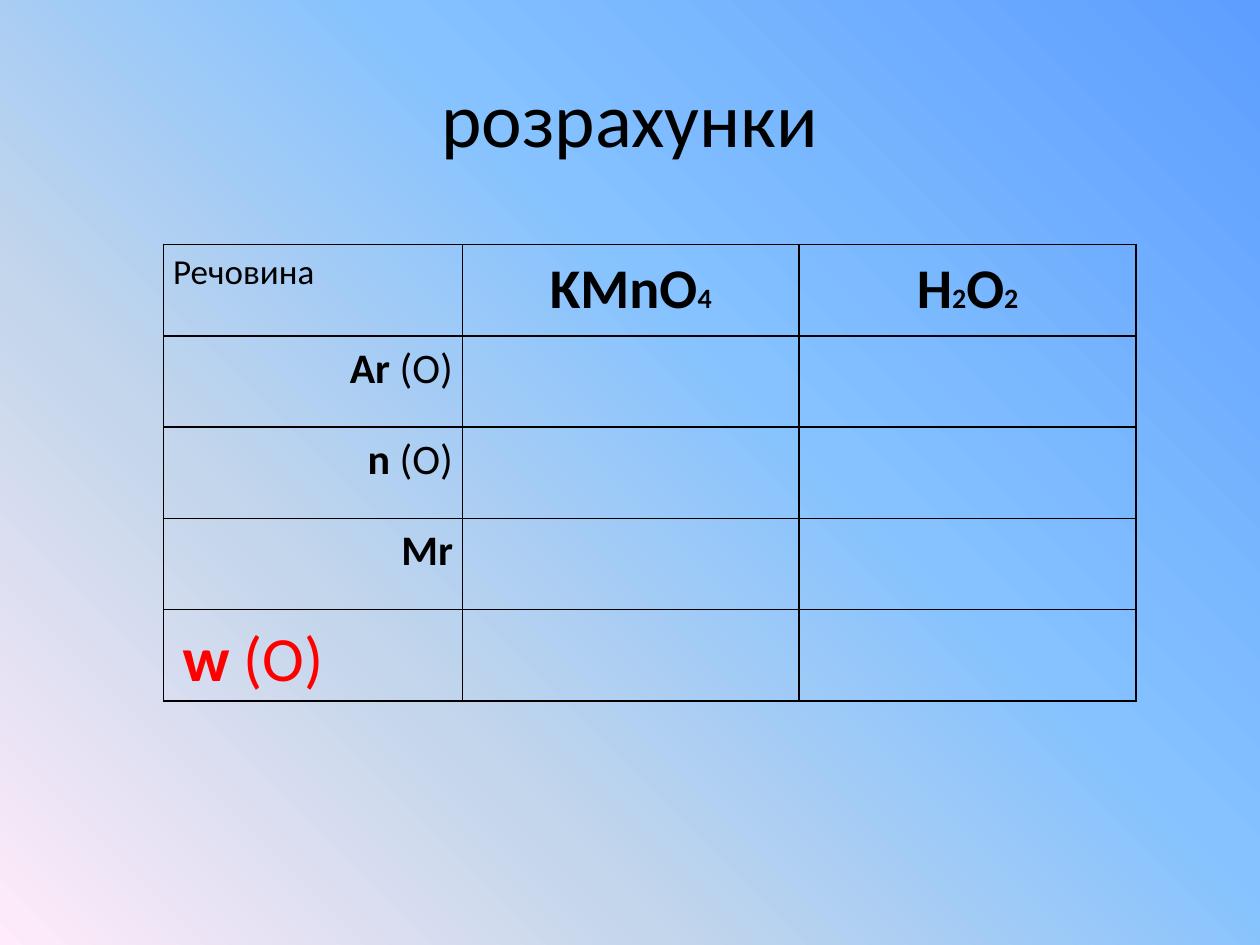
import dataclasses
import typing

import pptx
import pptx.dml.color
import pptx.enum.text
import pptx.oxml
import pptx.oxml.ns
import pptx.util

Cm = pptx.util.Cm
Align = pptx.enum.text.PP_ALIGN


@dataclasses.dataclass(frozen=True)
class Theme:
    font: str = "Calibri"
    ink: str = "000000"
    accent: str = "FF0000"
    title: int = 44
    result: int = 36
    formula: int = 32
    label: int = 24
    heading: int = 20
    index: int = 16
    border: float = 1
    line_spacing: float = 1.15
    gradient: tuple = ((0, "5E9EFF"), (40, "85C2FF"), (70, "C4D6EB"), (100, "FFEBFA"))
    # Counter-clockwise degrees
    gradient_angle: int = 225


THEME = Theme()


class Span(typing.NamedTuple):
    text: str
    size: int = THEME.label
    bold: bool = False
    color: str = THEME.ink


class Entry(typing.NamedTuple):
    spans: list[Span]
    align: Align


def formula(*parts: str) -> Entry:
    """Chemical formula in which the digits are set small."""
    spans = [Span(part, THEME.index if part.isdigit() else THEME.formula, True) for part in parts]
    return Entry(spans, Align.CENTER)


def quantity(symbol: str, element: str = "") -> Entry:
    spans = [Span(symbol, bold=True)]
    if element:
        spans.append(Span(element))
    return Entry(spans, Align.RIGHT)


HEADER = [
    Entry([Span("Речовина", THEME.heading)], Align.LEFT),
    formula("KMnO", "4"),
    formula("H", "2", "O", "2"),
]
MASS_FRACTION = Entry(
    [
        Span(" "),
        Span("w", THEME.result, True, THEME.accent),
        Span(" (O)", THEME.result, False, THEME.accent),
    ],
    Align.LEFT,
)
ROWS = [
    HEADER,
    [quantity("Ar", " (O)")],
    [quantity("n", " (O)")],
    [quantity("Mr")],
    [MASS_FRACTION],
]
COLUMN_WIDTHS = [Cm(6.02), Cm(6.79), Cm(6.79)]
ROW_HEIGHT = Cm(1.84)


def paint_background(slide) -> None:
    fill = slide.background.fill
    fill.gradient()
    fill.gradient_angle = THEME.gradient_angle
    stops = slide.background._cSld.find(".//" + pptx.oxml.ns.qn("a:gsLst"))
    for stop in list(stops):
        stops.remove(stop)
    for percent, color in THEME.gradient:
        stops.append(pptx.oxml.parse_xml(
            f'<a:gs {pptx.oxml.ns.nsdecls("a")} pos="{percent * 1000}">'
            f'<a:srgbClr val="{color}"/></a:gs>'
        ))


def write(paragraph, entry: Entry) -> None:
    paragraph.alignment = entry.align
    for span in entry.spans:
        run = paragraph.add_run()
        run.text = span.text
        run.font.name = THEME.font
        run.font.size = pptx.util.Pt(span.size)
        run.font.bold = span.bold
        run.font.color.rgb = pptx.dml.color.RGBColor.from_string(span.color)


def draw_title(slide, text: str) -> None:
    frame = slide.shapes.add_textbox(Cm(1.27), Cm(0.76), Cm(22.86), Cm(3.18)).text_frame
    frame.word_wrap = True
    frame.vertical_anchor = pptx.enum.text.MSO_ANCHOR.MIDDLE
    write(frame.paragraphs[0], Entry([Span(text, THEME.title)], Align.CENTER))


def style_cell(cell) -> None:
    cell.margin_left = cell.margin_right = Cm(0.19)
    cell.margin_top = cell.margin_bottom = 0
    cell.fill.background()
    properties = cell._tc.get_or_add_tcPr()
    for position, side in enumerate("LRTB"):
        properties.insert(position, pptx.oxml.parse_xml(
            f'<a:ln{side} {pptx.oxml.ns.nsdecls("a")} w="{pptx.util.Pt(THEME.border)}">'
            f'<a:solidFill><a:srgbClr val="{THEME.ink}"/></a:solidFill></a:ln{side}>'
        ))


def draw_table(slide, rows: list[list[Entry]]) -> None:
    """Draw the grid; cells after the last entry of a row stay empty."""
    table = slide.shapes.add_table(
        len(rows), len(COLUMN_WIDTHS), Cm(3.3), Cm(4.93),
        sum(COLUMN_WIDTHS), ROW_HEIGHT * len(rows),
    ).table
    table.first_row = table.horz_banding = False
    for column, width in zip(table.columns, COLUMN_WIDTHS):
        column.width = width
    for row in table.rows:
        row.height = ROW_HEIGHT
    for cell in table.iter_cells():
        style_cell(cell)
    for row_index, entries in enumerate(rows):
        for column_index, entry in enumerate(entries):
            paragraph = table.cell(row_index, column_index).text_frame.paragraphs[0]
            paragraph.line_spacing = THEME.line_spacing
            write(paragraph, entry)


def main() -> None:
    presentation = pptx.Presentation()
    presentation.slide_width = Cm(25.4)
    presentation.slide_height = Cm(19.05)
    slide = presentation.slides.add_slide(presentation.slide_layouts[6])
    paint_background(slide)
    draw_title(slide, "розрахунки")
    draw_table(slide, ROWS)
    presentation.save("out.pptx")


if __name__ == "__main__":
    main()
